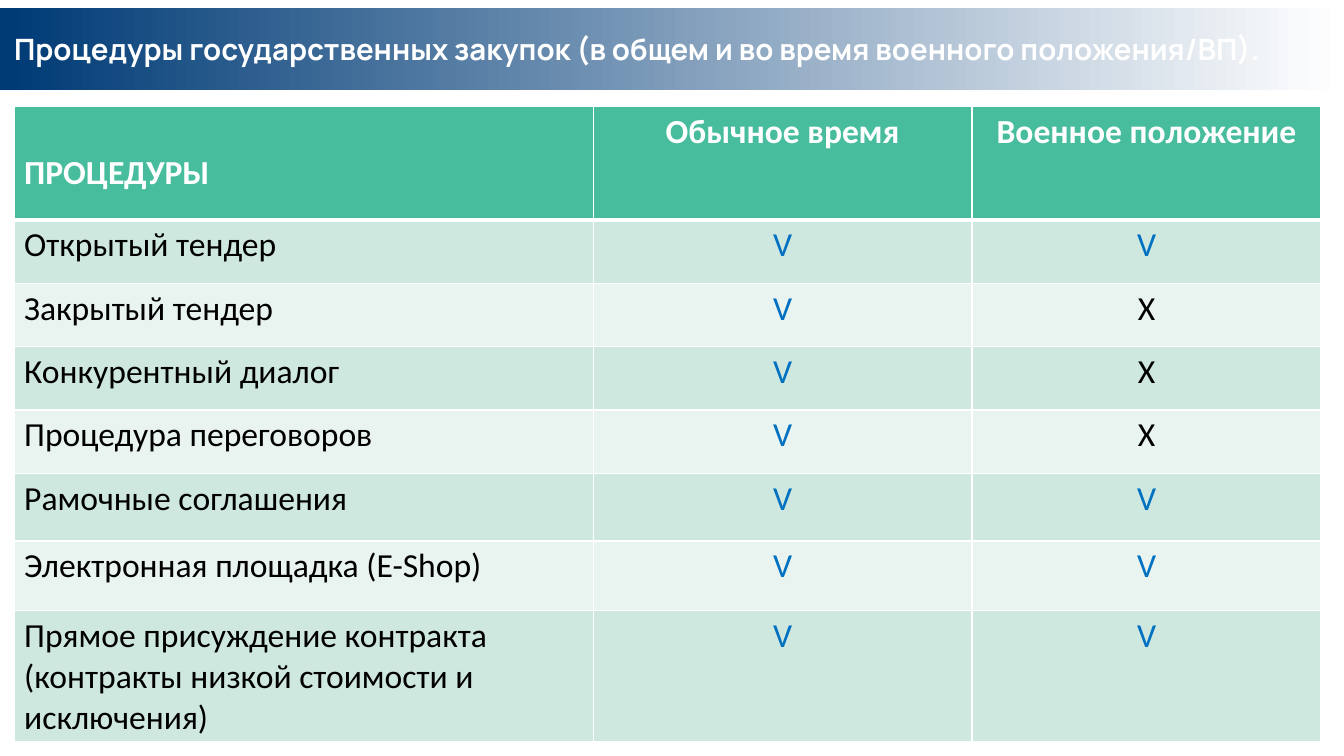
from lxml import etree
from pptx import Presentation
from pptx import util as u
from pptx.dml.color import RGBColor
from pptx.enum import shapes, text
from pptx.oxml.ns import qn

Pt = u.Pt
WHITE = RGBColor(0xFF, 0xFF, 0xFF)
BLACK = RGBColor(0, 0, 0)
NAVY = RGBColor(0x00, 0x3B, 0x76)
BLUE = RGBColor(0x00, 0x70, 0xC0)
GREEN = RGBColor(0x48, 0xBD, 0x9E)
MINT = RGBColor(0xCF, 0xE8, 0xDF)
PALE = RGBColor(0xE9, 0xF4, 0xF0)


def write(frame, words, size=24, font="Calibri", color=BLACK, bold=False,
          align=text.PP_ALIGN.LEFT):
    paragraph = frame.paragraphs[0]
    paragraph.alignment = align
    run = paragraph.add_run()
    run.text = words
    run.font.size = Pt(size)
    run.font.name = font
    run.font.bold = bold
    run.font.color.rgb = color


def add_borders(cell, bottom):
    properties = cell._tc.get_or_add_tcPr()
    for side, width in (("L", 1), ("R", 1), ("T", 1), ("B", bottom)):
        line = etree.SubElement(properties, qn(f"a:ln{side}"), w=str(Pt(width)))
        paint = etree.SubElement(line, qn("a:solidFill"))
        etree.SubElement(paint, qn("a:srgbClr"), val=str(WHITE))


deck = Presentation()
deck.slide_width = Pt(960)
deck.slide_height = Pt(540)
slide = deck.slides.add_slide(deck.slide_layouts[6])

banner = slide.shapes.add_shape(
    shapes.MSO_SHAPE.RECTANGLE, Pt(-2.9), Pt(5.8), Pt(960), Pt(58.3))
banner.shadow.inherit = False
banner.line.fill.background()
banner.fill.gradient()
banner.fill.gradient_angle = 0
for stop, color, position in zip(banner.fill.gradient_stops, (NAVY, WHITE), (0.01, 1)):
    stop.color.rgb = color
    stop.position = position

title = slide.shapes.add_textbox(Pt(10.1), Pt(17.3), Pt(903.6), Pt(34.6)).text_frame
title.word_wrap = True
title.vertical_anchor = text.MSO_ANCHOR.MIDDLE
title.margin_left = 0
write(title, "Процедуры государственных закупок (в общем и во время военного положения/ВП).",
      size=21, font="Manrope", color=WHITE, bold=True)

procedures = [
    ("ПРОЦЕДУРЫ", "Обычное время", "Военное положение"),
    ("Открытый тендер", "V", "V"),
    ("Закрытый тендер", "V", "X"),
    ("Конкурентный диалог", "V", "X"),
    ("Процедура переговоров", "V", "X"),
    ("Рамочные соглашения", "V", "V"),
    ("Электронная площадка (E-Shop)", "V", "V"),
    ("Прямое присуждение контракта (контракты низкой стоимости и исключения)", "V", "V"),
]
row_heights = [81.2, 45.3, 45.3, 45.3, 45.3, 48.2, 49.8, 67.7]
column_widths = [413.6, 270.7, 249.3]

table = slide.shapes.add_table(
    len(procedures), len(column_widths), Pt(10.1), Pt(75.8),
    Pt(sum(column_widths)), Pt(sum(row_heights))).table
for column, width in zip(table.columns, column_widths):
    column.width = Pt(width)

for r, (procedure, height) in enumerate(zip(procedures, row_heights)):
    table.rows[r].height = Pt(height)
    header = r == 0
    for c, words in enumerate(procedure):
        cell = table.cell(r, c)
        add_borders(cell, bottom=3 if header else 1)
        cell.fill.solid()
        cell.fill.fore_color.rgb = GREEN if header else MINT if r % 2 else PALE
        write(cell.text_frame, words, bold=header,
              color=WHITE if header else BLUE if words == "V" else BLACK,
              align=text.PP_ALIGN.CENTER if c else text.PP_ALIGN.LEFT)
table.cell(0, 0).margin_top = Pt(33)

deck.save("out.pptx")
